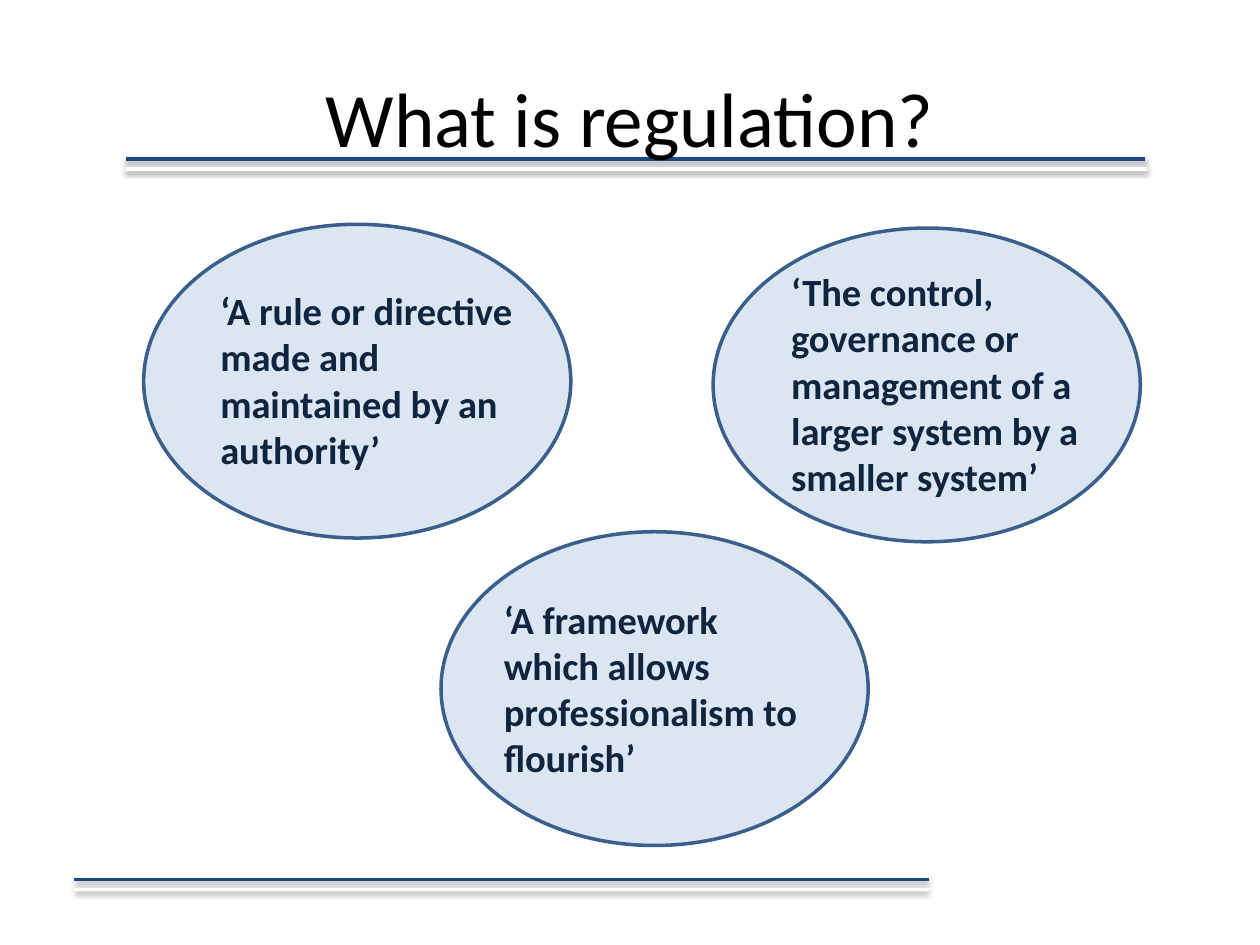
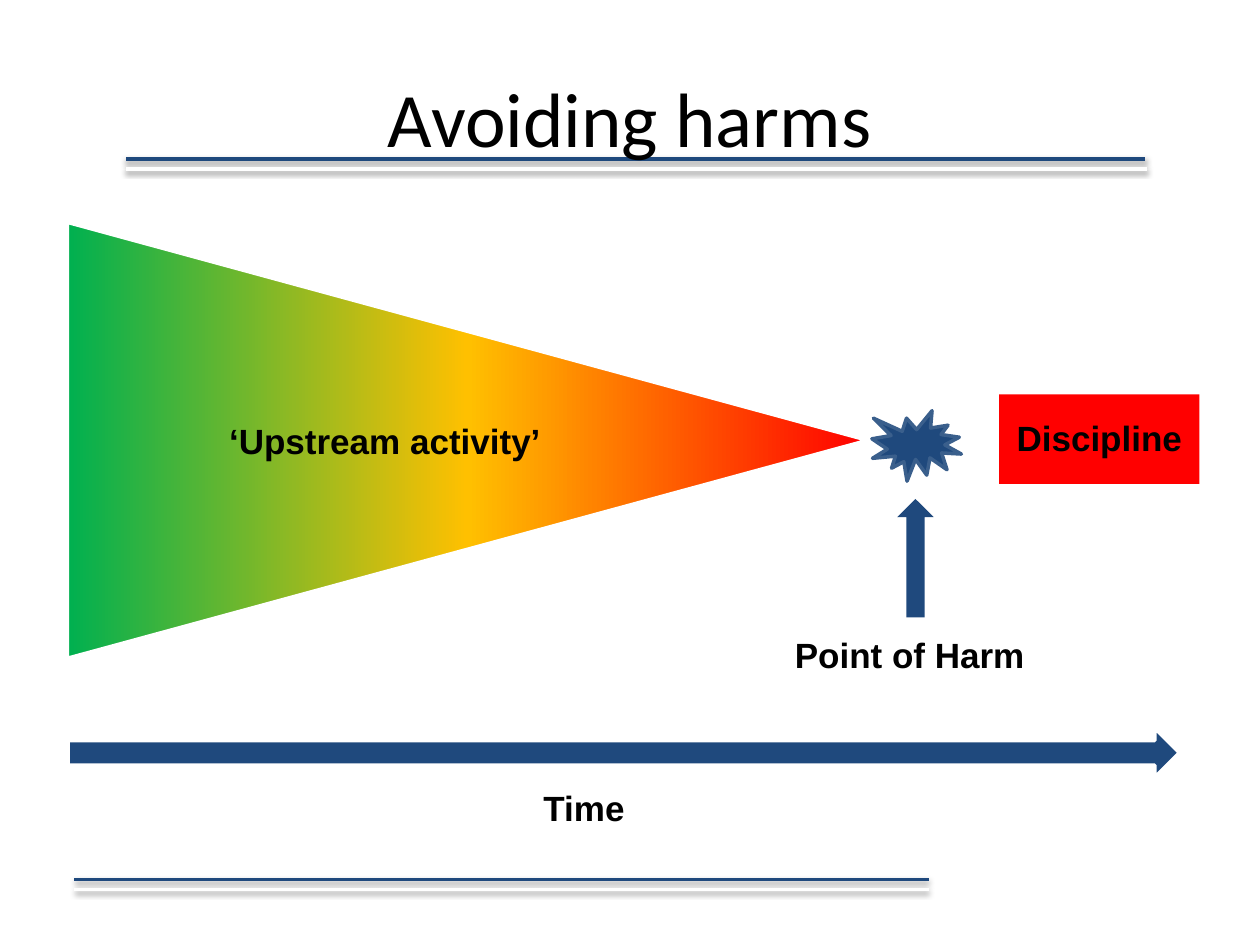
"""Build two slides on regulation and on avoiding harms, on a grid of 100 by 75 cells."""
from typing import NamedTuple, Optional

from pptx import Presentation
from pptx.dml.color import RGBColor
from pptx.enum.shapes import MSO_CONNECTOR, MSO_SHAPE
from pptx.enum.text import MSO_ANCHOR, PP_ALIGN
from pptx.oxml import parse_xml
from pptx.oxml.ns import nsdecls
from pptx.util import Inches, Pt

COLS, ROWS = 100, 75
WIDTH, HEIGHT = Inches(10), Inches(7.5)
COLOURS = {
    "navy": "1F497D", "edge": "3A5F8C", "pale": "DCE6F2", "ink": "0F243E",
    "black": "000000", "white": "FFFFFF",
    "red": "FF0000", "amber": "FFC000", "green": "00B050",
}


class Box(NamedTuple):
    col: float
    row: float
    cols: float
    rows: float


class Rule(NamedTuple):
    start: float
    end: float
    row: float
    colour: str


class Quote(NamedTuple):
    text: str
    oval: tuple[float, float]
    box: Box


class Shape(NamedTuple):
    kind: MSO_SHAPE
    box: Box
    fill: str
    line: Optional[str] = None


class Label(NamedTuple):
    text: str
    box: Box
    align: PP_ALIGN = PP_ALIGN.LEFT


RULES = [
    Rule(10, 90.9, 12.6, "navy"), Rule(10, 91, 13.4, "white"),
    Rule(5.9, 73.7, 69.8, "navy"), Rule(5.9, 73.7, 70.6, "white"),
]
OVAL = (33.9, 24.9)
QUOTES = [
    Quote("‘The control, governance or management of a larger system by a smaller system’",
          (56.6, 18.1), Box(61.8, 20.8, 25.8, 19.5)),
    Quote("‘A framework which allows professionalism to flourish’",
          (35, 42.2), Box(39, 46.8, 26, 15.8)),
    Quote("‘A rule or directive made and maintained by an authority’",
          (11.4, 17.8), Box(16.5, 22.3, 28.6, 15.8)),
]
CONE = Box(19.8, 3.2, 34.6, 63.5)
SHAPES = [
    Shape(MSO_SHAPE.UP_ARROW, Box(71.2, 39.6, 2.9, 9.4), "navy"),
    Shape(MSO_SHAPE.RECTANGLE, Box(79.3, 31.3, 15.9, 7.1), "red"),
    Shape(MSO_SHAPE.RIGHT_ARROW, Box(5.4, 57.8, 88.2, 3.9), "navy", "white"),
    Shape(MSO_SHAPE.EXPLOSION1, Box(69.2, 32.6, 7.1, 5.6), "navy", "edge"),
]
LABELS = [
    Label("Discipline", Box(79.3, 32.6, 15.9, 4.4), PP_ALIGN.CENTER),
    Label("Point of Harm", Box(62.1, 49.8, 21.3, 4.4)),
    Label("‘Upstream activity’", Box(17.2, 32.8, 30.7, 4.4)),
    Label("Time", Box(36.9, 61.9, 18.9, 4.4), PP_ALIGN.CENTER),
]


def across(cols: float) -> int:
    return round(WIDTH * cols / COLS)


def down(rows: float) -> int:
    return round(HEIGHT * rows / ROWS)


def place(box: Box) -> tuple[int, int, int, int]:
    return across(box.col), down(box.row), across(box.cols), down(box.rows)


def tint(name: str) -> RGBColor:
    return RGBColor.from_string(COLOURS[name])


def stroke(line, colour: str) -> None:
    line.color.rgb = tint(colour)
    line.width = Pt(2)


def write(slide, text: str, box: Box, *, size: float, font: str, colour: str = "black",
          bold: bool = False, align: PP_ALIGN = PP_ALIGN.LEFT,
          anchor: MSO_ANCHOR = MSO_ANCHOR.TOP) -> None:
    frame = slide.shapes.add_textbox(*place(box)).text_frame
    frame.word_wrap = True
    frame.vertical_anchor = anchor
    para = frame.paragraphs[0]
    para.text = text
    para.alignment = align
    para.font.size, para.font.name, para.font.bold = Pt(size), font, bold
    para.font.color.rgb = tint(colour)


def draw(slide, item: Shape):
    shape = slide.shapes.add_shape(item.kind, *place(item.box))
    shape.shadow.inherit = False
    shape.fill.solid()
    shape.fill.fore_color.rgb = tint(item.fill)
    if item.line:
        stroke(shape.line, item.line)
    else:
        shape.line.fill.background()
    return shape


def blend(shape, names: list[str]) -> None:
    step = 100000 // (len(names) - 1)
    stops = "".join(f'<a:gs pos="{i * step}"><a:srgbClr val="{COLOURS[name]}"/></a:gs>'
                    for i, name in enumerate(names))
    solid = shape.element.spPr.find("{*}solidFill")
    solid.getparent().replace(solid, parse_xml(
        f'<a:gradFill {nsdecls("a")} rotWithShape="1"><a:gsLst>{stops}</a:gsLst>'
        '<a:lin ang="5400000" scaled="0"/></a:gradFill>'))


def rule(slide, item: Rule) -> None:
    line = slide.shapes.add_connector(
        MSO_CONNECTOR.STRAIGHT, across(item.start), down(item.row),
        across(item.end), down(item.row))
    stroke(line.line, item.colour)
    line.element.spPr.append(parse_xml(
        f'<a:effectLst {nsdecls("a")}><a:outerShdw blurRad="{Pt(3.1)}" dist="{Pt(1.6)}" '
        f'dir="5400000" rotWithShape="0"><a:srgbClr val="{COLOURS["black"]}">'
        '<a:alpha val="38000"/></a:srgbClr></a:outerShdw></a:effectLst>'))


def start(deck, title: str):
    slide = deck.slides.add_slide(deck.slide_layouts[6])
    for item in RULES:
        rule(slide, item)
    write(slide, title, Box(5, 3, 90, 12.5), size=44, font="Calibri",
          align=PP_ALIGN.CENTER, anchor=MSO_ANCHOR.MIDDLE)
    return slide


def define(deck) -> None:
    slide = start(deck, "What is regulation?")
    for quote in QUOTES:
        draw(slide, Shape(MSO_SHAPE.OVAL, Box(*quote.oval, *OVAL), "pale", "edge"))
    for quote in QUOTES:
        write(slide, quote.text, quote.box, size=22, font="Calibri", colour="ink", bold=True)


def avoid(deck) -> None:
    slide = start(deck, "Avoiding harms")
    cone = draw(slide, Shape(MSO_SHAPE.ISOSCELES_TRIANGLE, CONE, "red", "white"))
    cone.rotation = 90
    blend(cone, ["red", "amber", "green"])
    for item in SHAPES:
        draw(slide, item)
    for label in LABELS:
        write(slide, label.text, label.box, size=20, font="Arial", bold=True, align=label.align)


def main() -> None:
    deck = Presentation()
    deck.slide_width, deck.slide_height = WIDTH, HEIGHT
    define(deck)
    avoid(deck)
    deck.save("out.pptx")


if __name__ == "__main__":
    main()
